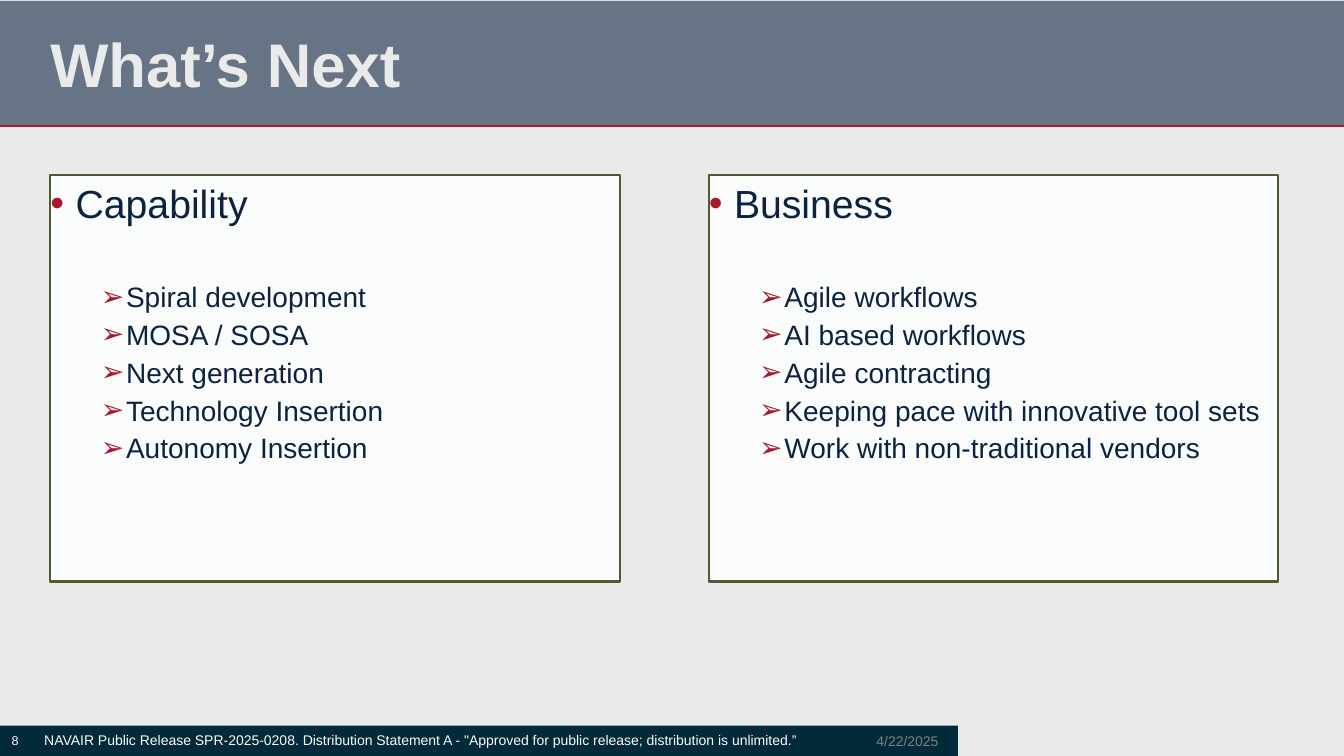
"""Build the What's Next slide: two bulleted panels under a title band."""
from lxml import etree
from pptx import Presentation
from pptx.dml.color import RGBColor
from pptx.enum.shapes import MSO_CONNECTOR, MSO_SHAPE
from pptx.enum.text import MSO_ANCHOR, PP_ALIGN
from pptx.oxml.ns import qn
from pptx.util import Inches, Pt

RECTANGLE, STRAIGHT = MSO_SHAPE.RECTANGLE, MSO_CONNECTOR.STRAIGHT
TOP, MIDDLE = MSO_ANCHOR.TOP, MSO_ANCHOR.MIDDLE
LEFT, CENTER = PP_ALIGN.LEFT, PP_ALIGN.CENTER

TITLE = "What’s Next"
PANELS = [
    ("Capability", ["Spiral development", "MOSA / SOSA", "Next generation",
                    "Technology Insertion", "Autonomy Insertion"]),
    ("Business", ["Agile workflows", "AI based workflows", "Agile contracting",
                  "Keeping pace with innovative tool sets",
                  "Work with non-traditional vendors"]),
]
PAGE_NUMBER = "8"
DATE = "4/22/2025"
RELEASE = ("NAVAIR Public Release SPR-2025-0208. Distribution Statement A - "
           "\"Approved for public release; distribution is unlimited.”")

COLORS = {"page": "EAEAEA", "navy": "0C2340", "red": "A6192E", "footer": "022A3A",
          "white": "FAFBFB", "olive": "4D5B30", "gray": "808080"}
FONT = "Arial"
WIDTH, HEIGHT = 13.33, 7.5
MARGIN = 0.5
BAND_HEIGHT = 1.25
FOOTER_HEIGHT, FOOTER_WIDTH = 0.3, 9.5
FOOTER_TOP = HEIGHT - FOOTER_HEIGHT
DATE_WIDTH = 1
PANEL_TOP, PANEL_HEIGHT = 1.74, 4.03
PANEL_WIDTH, PANEL_PITCH = 5.65, 6.53
HANGING = 0.25
LIST_GAP = 35


def color(name):
    return RGBColor.from_string(COLORS[name])


def add_rectangle(page, left, top, width, height, fill, line=None, opacity=None):
    shape = page.shapes.add_shape(RECTANGLE, Inches(left), Inches(top),
                                  Inches(width), Inches(height))
    shape.shadow.inherit = False
    shape.fill.solid()
    shape.fill.fore_color.rgb = color(fill)
    if opacity:
        fill_color = shape.fill._xPr.find(qn("a:solidFill"))[0]
        etree.SubElement(fill_color, qn("a:alpha"), val=str(opacity * 1000))
    if line:
        shape.line.color.rgb = color(line)
        shape.line.width = Pt(1.5)
    else:
        shape.line.fill.background()
    return shape


def prepare_frame(box, anchor=TOP, insets=(0, 0, 0, 0)):
    frame = box.text_frame
    frame.word_wrap = True
    frame.vertical_anchor = anchor
    (frame.margin_left, frame.margin_top,
     frame.margin_right, frame.margin_bottom) = map(Inches, insets)
    return frame


def write(para, text, size, ink="navy", bold=False, align=LEFT,
          bullet=None, indent=0, before=0, after=0):
    para.alignment = align
    para.space_before, para.space_after = Pt(before), Pt(after)
    if bullet:
        properties = para._p.get_or_add_pPr()
        properties.set("marL", str(Inches(indent)))
        properties.set("indent", str(-Inches(HANGING)))
        bullet_color = etree.SubElement(properties, qn("a:buClr"))
        etree.SubElement(bullet_color, qn("a:srgbClr"), val=COLORS["red"])
        etree.SubElement(properties, qn("a:buFont"), typeface=FONT)
        etree.SubElement(properties, qn("a:buChar"), char=bullet)
    span = para.add_run()
    span.text = text
    span.font.name, span.font.size, span.font.bold = FONT, Pt(size), bold
    span.font.color.rgb = color(ink)


def add_label(page, text, left, top, width, height, size, ink,
              anchor=TOP, insets=(0, 0, 0, 0), **style):
    box = page.shapes.add_textbox(Inches(left), Inches(top), Inches(width), Inches(height))
    write(prepare_frame(box, anchor, insets).paragraphs[0], text, size, ink, **style)


def add_panel(page, column, heading, items):
    panel = add_rectangle(page, MARGIN + column * PANEL_PITCH, PANEL_TOP,
                          PANEL_WIDTH, PANEL_HEIGHT, "white", line="olive")
    frame = prepare_frame(panel, insets=(0, 0.04, 0, 0))
    write(frame.paragraphs[0], heading, 28, bullet="•", indent=HANGING, after=3)
    for row, item in enumerate(items):
        write(frame.add_paragraph(), item, 20, bullet="➢", indent=3 * HANGING,
              before=0 if row else LIST_GAP, after=3)


def main():
    deck = Presentation()
    deck.slide_width, deck.slide_height = Inches(WIDTH), Inches(HEIGHT)
    page = deck.slides.add_slide(deck.slide_layouts[6])
    page.background.fill.solid()
    page.background.fill.fore_color.rgb = color("page")

    add_rectangle(page, 0, 0.01, WIDTH, BAND_HEIGHT, "navy", opacity=59)
    rule = page.shapes.add_connector(STRAIGHT, 0, Inches(BAND_HEIGHT),
                                     Inches(WIDTH), Inches(BAND_HEIGHT))
    rule.line.color.rgb = color("red")
    rule.line.width = Pt(1.5)
    etree.SubElement(rule._element.spPr, qn("a:effectLst"))
    add_label(page, TITLE, MARGIN, 0.26, 11.5, 0.9, 44, "page", bold=True)

    for column, (heading, items) in enumerate(PANELS):
        add_panel(page, column, heading, items)

    add_rectangle(page, 0, FOOTER_TOP, FOOTER_WIDTH, FOOTER_HEIGHT, "footer")
    add_label(page, PAGE_NUMBER, 0, FOOTER_TOP, 0.3, FOOTER_HEIGHT, 9, "white",
              anchor=MIDDLE, align=CENTER)
    add_label(page, DATE, FOOTER_WIDTH - DATE_WIDTH, FOOTER_TOP, DATE_WIDTH,
              FOOTER_HEIGHT, 10, "gray", anchor=MIDDLE, align=CENTER)
    add_label(page, RELEASE, 0.34, 7.21, 8.12, 0.27, 10, "white",
              insets=(0.1, 0.05, 0.1, 0.05))
    deck.save("out.pptx")


if __name__ == "__main__":
    main()
